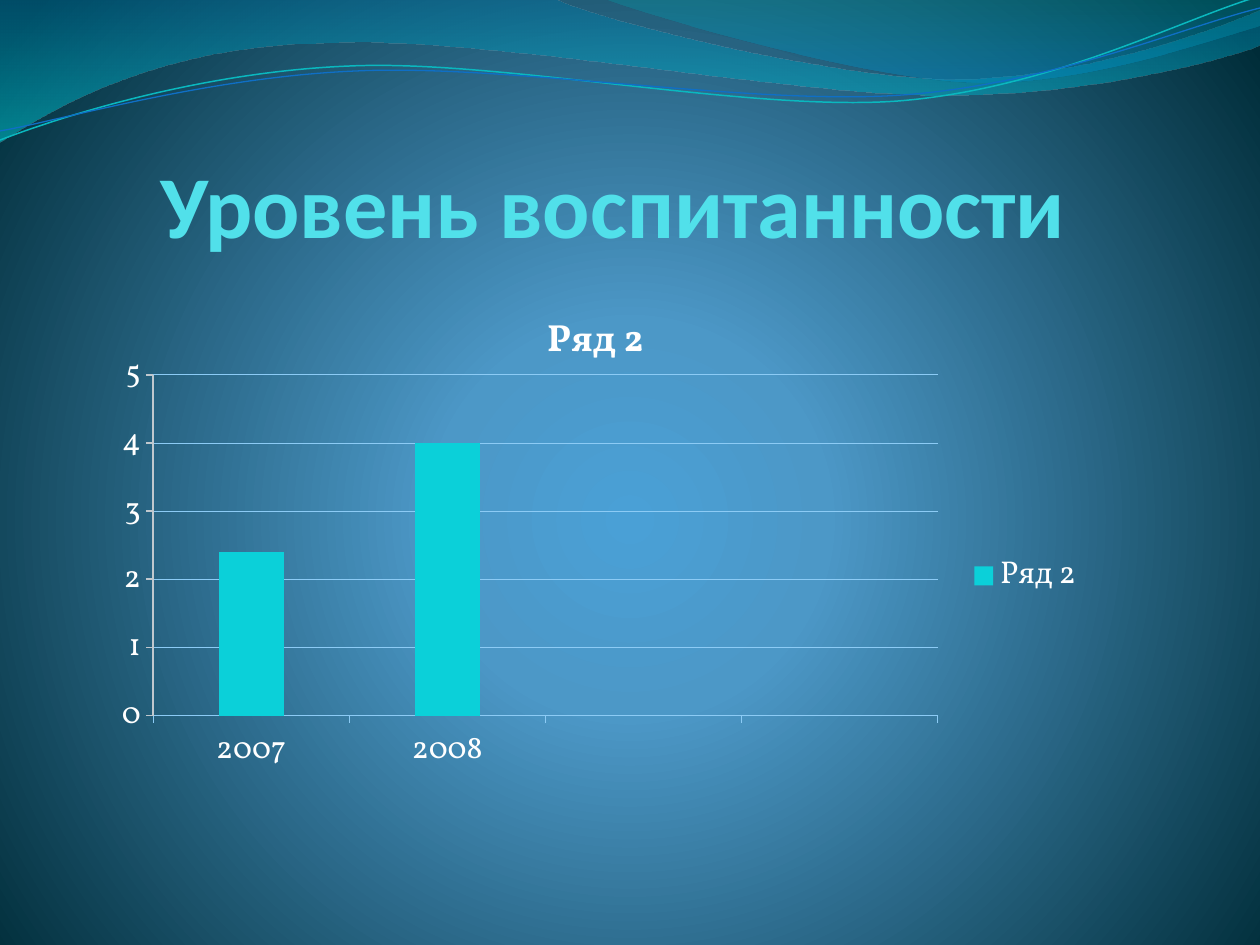
from dataclasses import dataclass

from lxml import etree
from pptx import Presentation
from pptx import util as u
from pptx.chart import data
from pptx.dml.color import RGBColor
from pptx.enum import chart as ce
from pptx.enum import text
from pptx.oxml import parse_xml
from pptx.oxml.ns import nsdecls, qn

PX = u.Inches(1) // 126
WIDE, HIGH = 1260, 945


@dataclass(frozen=True)
class Theme:
    head: str = "51E0EA"
    body: str = "FFFFFF"
    bar: str = "0BD0D9"
    grid: str = "8CCBF5"
    axis: str = "C0C8CE"
    teal: str = "0AB8BF"
    blue: str = "0F6FC6"
    head_font: str = "Calibri"
    body_font: str = "Vollkorn"
    head_size: float = 50.4
    name_size: float = 21.6
    body_size: float = 18


T = Theme()
BACK = [(0, "4AA0D6", 100), (25, "4C98C7", 100), (100, "002C38", 100)]
ROUND = '<a:path path="circle"><a:fillToRect l="10000" t="110000" r="10000" b="100000"/></a:path>'
DOWN = '<a:lin ang="5400000" scaled="1"/>'

# Each wave is a start point and steps: 2 numbers for a line, 6 for a curve.
BANDS = [
    ([(0, 0), (554, -1), (600, 21, 837, 79, 955, 79), (1075, 79, 1207, 33, 1260, 11),
      (1261, 45), (1239, 55, 1096, 96, 940, 95), (784, 95, 481, 35, 324, 43),
      (163, 45, 58, 105, -1, 142)],
     [(0, "0074A1", 45), (100, "00C6CF", 55)]),
    ([(604, -1), (641, 14, 859, 78, 969, 82), (1079, 87, 1211, 40, 1260, 26), (1260, 0)],
     [(0, "00A1A9", 30), (80, "008BBF", 45)]),
]
LINES = [
    ([(0, 140), (60, 117, 199, 72, 349, 66), (498, 59, 747, 112, 898, 101),
      (1050, 89, 1182, 19, 1257, -3)], T.teal, 0.85),
    ([(0, 131), (59, 121, 207, 77, 357, 71), (508, 64, 752, 106, 903, 95),
      (1053, 84, 1186, 26, 1260, 8)], T.blue, 0.75),
]


def rgb(code):
    return RGBColor.from_string(code)


def style(font, face, size, color, bold=False):
    font.name, font.size, font.bold = face, u.Pt(size), bold
    font.color.rgb = rgb(color)


def blend(fill, node, stops, way):
    """Fill with colour stops given as (place, colour, opacity)."""
    fill.gradient()
    marks = "".join(
        f'<a:gs pos="{at * 1000}"><a:srgbClr val="{code}">'
        f'<a:alpha val="{part * 1000}"/></a:srgbClr></a:gs>'
        for at, code, part in stops)
    old = node.find(".//" + qn("a:gradFill"))
    new = parse_xml(f'<a:gradFill {nsdecls("a")} rotWithShape="1">'
                    f'<a:gsLst>{marks}</a:gsLst>{way}</a:gradFill>')
    old.getparent().replace(old, new)


def wave(slide, box, steps, close):
    """Draw the knots as a freeform, then join each triple into one curve."""
    left, top = box
    dots = [((left + s[i]) * PX, (top + s[i + 1]) * PX)
            for s in steps for i in range(0, len(s), 2)]
    pen = slide.shapes.build_freeform(*dots[0], scale=1.0)
    pen.add_line_segments(dots[1:], close=close)
    shape = pen.convert_to_shape()
    shape.shadow.inherit = False
    legs = iter(shape._element.findall(".//" + qn("a:lnTo")))
    for step in steps[1:]:
        leg = next(legs)
        if len(step) == 6:
            curve = etree.Element(qn("a:cubicBezTo"))
            leg.addprevious(curve)
            for part in (leg, next(legs), next(legs)):
                curve.append(part[0])
                part.getparent().remove(part)
    return shape


def waves(slide, box):
    for steps, stops in BANDS:
        band = wave(slide, box, steps, True)
        blend(band.fill, band._element, stops, DOWN)
        band.line.fill.background()
    for steps, color, width in LINES:
        line = wave(slide, box, steps, False)
        line.fill.background()
        line.line.color.rgb = rgb(color)
        line.line.width = u.Pt(width)


def title(slide, box, words):
    frame = slide.shapes.add_textbox(*(n * PX for n in box)).text_frame
    frame.word_wrap = True
    frame.vertical_anchor = text.MSO_ANCHOR.BOTTOM
    frame.margin_left = frame.margin_top = frame.margin_bottom = 0
    frame.margin_right = 2 * PX
    para = frame.paragraphs[0]
    para.alignment = text.PP_ALIGN.CENTER
    run = para.add_run()
    run.text = words
    style(run.font, T.head_font, T.head_size, T.head, True)


def place(node, spot, **parts):
    """Fix a chart part by shares of the chart, at the given child index."""
    for old in node.findall(qn("c:layout")):
        node.remove(old)
    layout = etree.Element(qn("c:layout"))
    form = etree.SubElement(layout, qn("c:manualLayout"))
    for name, val in parts.items():
        etree.SubElement(form, qn("c:" + name)).set("val", str(val))
    node.insert(spot, layout)


def bars(slide, box, name, cats, vals):
    info = data.CategoryChartData()
    info.categories = cats
    info.add_series(name, vals)
    chart = slide.shapes.add_chart(
        ce.XL_CHART_TYPE.COLUMN_CLUSTERED, *(n * PX for n in box), info).chart
    style(chart.font, T.body_font, T.body_size, T.body)

    chart.has_title = True
    run = chart.chart_title.text_frame.paragraphs[0].add_run()
    run.text = name
    style(run.font, T.body_font, T.name_size, T.body, True)
    chart.chart_title.include_in_layout = False

    chart.has_legend = True
    chart.legend.position = ce.XL_LEGEND_POSITION.RIGHT
    chart.legend.include_in_layout = False

    plot = chart.plots[0]
    plot.gap_width, plot.vary_by_categories = 201, False
    fill = plot.series[0].format.fill
    fill.solid()
    fill.fore_color.rgb = rgb(T.bar)

    side, foot = chart.value_axis, chart.category_axis
    side.minimum_scale, side.maximum_scale, side.major_unit = 0, 5, 1
    side.has_major_gridlines = True
    for line, color, width in ((side.format.line, T.axis, 1),
                               (side.major_gridlines.format.line, T.grid, 0.5),
                               (foot.format.line, T.grid, 0.5)):
        line.color.rgb = rgb(color)
        line.width = u.Pt(width)
    for axis in (side, foot):
        axis.major_tick_mark = ce.XL_TICK_MARK.OUTSIDE

    root = chart._chartSpace.chart
    place(root.plotArea, 0, layoutTarget="inner", xMode="edge", yMode="edge",
          x=0.08, y=0.16, w=0.745, h=0.613)
    place(chart.legend._element, 1, xMode="edge", yMode="edge", x=0.85, y=0.47)


def main():
    deck = Presentation()
    deck.slide_width, deck.slide_height = WIDE * PX, HIGH * PX
    slide = deck.slides.add_slide(deck.slide_layouts[6])
    blend(slide.background.fill, slide._element, BACK, ROUND)
    waves(slide, (0, 0))
    title(slide, (73, 189, 1082, 67), "Уровень воспитанности")
    bars(slide, (69, 286, 1053, 556), "Ряд 2",
         ["2007", "2008", "", ""], [2.4, 4, None, None])
    deck.save("out.pptx")


if __name__ == "__main__":
    main()
